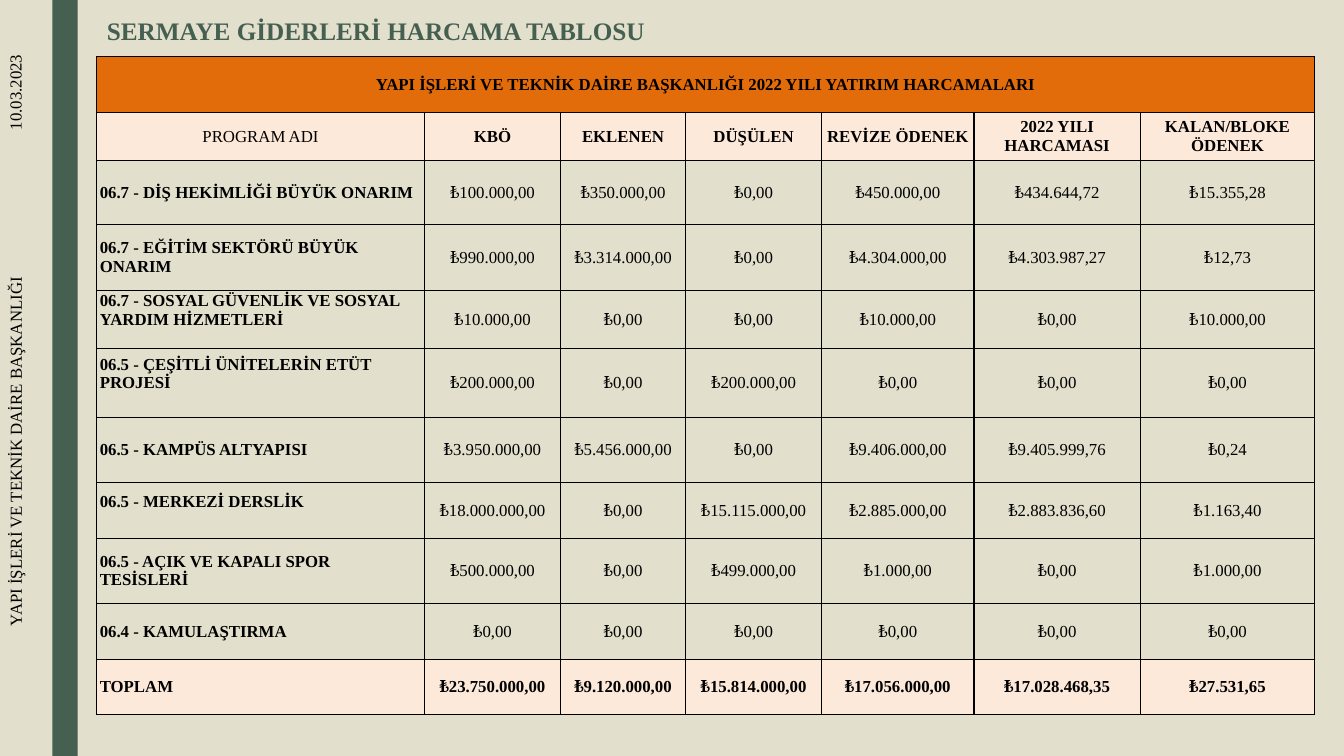
from pptx import Presentation
from pptx.dml.color import RGBColor as RGB
from pptx.enum.shapes import MSO_SHAPE as SHAPE
from pptx.enum.text import MSO_ANCHOR as ANCHOR, PP_ALIGN as ALIGN
from pptx.util import Inches, Pt
from lxml import etree

FACE = "Times New Roman"
NS = "http://schemas.openxmlformats.org/drawingml/2006/main"
SAND = RGB(0xE2, 0xDF, 0xCC)
GREEN = RGB(0x45, 0x5F, 0x51)
ORANGE = RGB(0xE2, 0x6B, 0x0A)
PEACH = RGB(0xFD, 0xE9, 0xD9)
BLACK = RGB(0, 0, 0)

COLS = [3.25, 1.35, 1.24, 1.35, 1.51, 1.65, 1.73]
ROWS = [0.56, 0.47, 0.64, 0.65, 0.56, 0.68, 0.65, 0.55, 0.65, 0.55, 0.55]
BANNER = "YAPI İŞLERİ VE TEKNİK DAİRE BAŞKANLIĞI 2022 YILI YATIRIM HARCAMALARI"
HEADS = ["PROGRAM ADI", "KBÖ", "EKLENEN", "DÜŞÜLEN", "REVİZE ÖDENEK",
         "2022 YILI HARCAMASI", "KALAN/BLOKE ÖDENEK"]
# Program name, then its amounts in lira
ITEMS = [
    ("06.7 - DİŞ HEKİMLİĞİ BÜYÜK ONARIM",
     "100.000,00 350.000,00 0,00 450.000,00 434.644,72 15.355,28"),
    ("06.7 - EĞİTİM SEKTÖRÜ BÜYÜK ONARIM",
     "990.000,00 3.314.000,00 0,00 4.304.000,00 4.303.987,27 12,73"),
    ("06.7 - SOSYAL GÜVENLİK VE SOSYAL YARDIM HİZMETLERİ",
     "10.000,00 0,00 0,00 10.000,00 0,00 10.000,00"),
    ("06.5 - ÇEŞİTLİ ÜNİTELERİN ETÜT PROJESİ",
     "200.000,00 0,00 200.000,00 0,00 0,00 0,00"),
    ("06.5 - KAMPÜS ALTYAPISI",
     "3.950.000,00 5.456.000,00 0,00 9.406.000,00 9.405.999,76 0,24"),
    ("06.5 - MERKEZİ DERSLİK",
     "18.000.000,00 0,00 15.115.000,00 2.885.000,00 2.883.836,60 1.163,40"),
    ("06.5 - AÇIK VE KAPALI SPOR TESİSLERİ",
     "500.000,00 0,00 499.000,00 1.000,00 0,00 1.000,00"),
    ("06.4 - KAMULAŞTIRMA", "0,00 0,00 0,00 0,00 0,00 0,00"),
    ("TOPLAM", "23.750.000,00 9.120.000,00 15.814.000,00 "
               "17.056.000,00 17.028.468,35 27.531,65"),
]
RAISED = {4, 5, 7}  # rows whose name sits above the middle


def style(para, size=12, color=BLACK, bold=False, align=ALIGN.LEFT):
    para.alignment = align
    font = para.font
    font.name, font.size, font.bold = FACE, Pt(size), bold
    font.color.rgb = color


def add_title(slide, left, top, width, height):
    title = slide.shapes.title
    title.left, title.top = Inches(left), Inches(top)
    title.width, title.height = Inches(width), Inches(height)
    frame = title.text_frame
    frame.text = "SERMAYE GİDERLERİ HARCAMA TABLOSU"
    frame.vertical_anchor = ANCHOR.TOP
    para = frame.paragraphs[0]
    para.line_spacing = 0.89
    style(para, 18, GREEN, True)


def add_side(slide, left, top, width, height, text):
    """Text that reads upwards; the box is given before its turn."""
    box = slide.shapes.add_textbox(
        Inches(left), Inches(top), Inches(width), Inches(height))
    box.rotation = 270
    frame = box.text_frame
    frame.word_wrap = True
    frame.text = text
    style(frame.paragraphs[0])


def add_bar(slide, left, top, width, height):
    bar = slide.shapes.add_shape(
        SHAPE.RECTANGLE, Inches(left), Inches(top), Inches(width), Inches(height))
    bar.shadow.inherit = False
    bar.fill.solid()
    bar.fill.fore_color.rgb = GREEN
    bar.line.fill.background()


def add_edges(cell):
    """Thin black borders, placed ahead of the cell's fill."""
    props = cell._tc.get_or_add_tcPr()
    for spot, side in enumerate(("lnL", "lnR", "lnT", "lnB")):
        line = etree.fromstring(
            f'<a:{side} xmlns:a="{NS}" w="12700"><a:solidFill>'
            f'<a:srgbClr val="{BLACK}"/></a:solidFill></a:{side}>')
        props.insert(spot, line)


def fill_cell(cell, text, fill=None, bold=False, align=ALIGN.CENTER):
    cell.text = text
    cell.vertical_anchor = ANCHOR.MIDDLE
    cell.margin_left = cell.margin_right = Inches(0.03)
    cell.margin_top = cell.margin_bottom = 0
    if fill is None:
        cell.fill.background()
    else:
        cell.fill.solid()
        cell.fill.fore_color.rgb = fill
    style(cell.text_frame.paragraphs[0], bold=bold, align=align)
    add_edges(cell)


def add_grid(slide, left, top):
    table = slide.shapes.add_table(
        len(ROWS), len(COLS), Inches(left), Inches(top),
        Inches(sum(COLS)), Inches(sum(ROWS))).table
    table.first_row = table.horz_banding = False
    for col, width in zip(table.columns, COLS):
        col.width = Inches(width)
    for row, height in zip(table.rows, ROWS):
        row.height = Inches(height)

    # Banner and column heads
    for col, head in enumerate(HEADS):
        fill_cell(table.cell(0, col), "" if col else BANNER, ORANGE, True)
        fill_cell(table.cell(1, col), head, PEACH, col > 0)
    table.cell(0, 0).merge(table.cell(0, len(COLS) - 1))

    # Programs and the total
    for row, (name, sums) in enumerate(ITEMS, 2):
        total = row == len(ROWS) - 1
        fill = PEACH if total else None
        first = table.cell(row, 0)
        fill_cell(first, name, fill, True, ALIGN.LEFT)
        if row in RAISED:
            first.margin_bottom = Inches(0.18)
        for col, value in enumerate(sums.split(), 1):
            fill_cell(table.cell(row, col), "₺" + value, fill, total)


def main():
    deck = Presentation()
    deck.slide_width, deck.slide_height = Inches(13.33), Inches(7.5)
    slide = deck.slides.add_slide(deck.slide_layouts[5])
    slide.background.fill.solid()
    slide.background.fill.fore_color.rgb = SAND

    add_bar(slide, 0.52, 0, 0.25, 7.5)
    add_side(slide, -0.55, 0.4, 1.54, 0.44, "10.03.2023")
    add_side(slide, -2.2, 3.86, 4.65, 0.25,
             "YAPI İŞLERİ VE TEKNİK DAİRE BAŞKANLIĞI")
    add_title(slide, 0.96, 0.14, 10.5, 0.53)
    add_grid(slide, 0.96, 0.56)
    deck.save("out.pptx")


if __name__ == "__main__":
    main()
